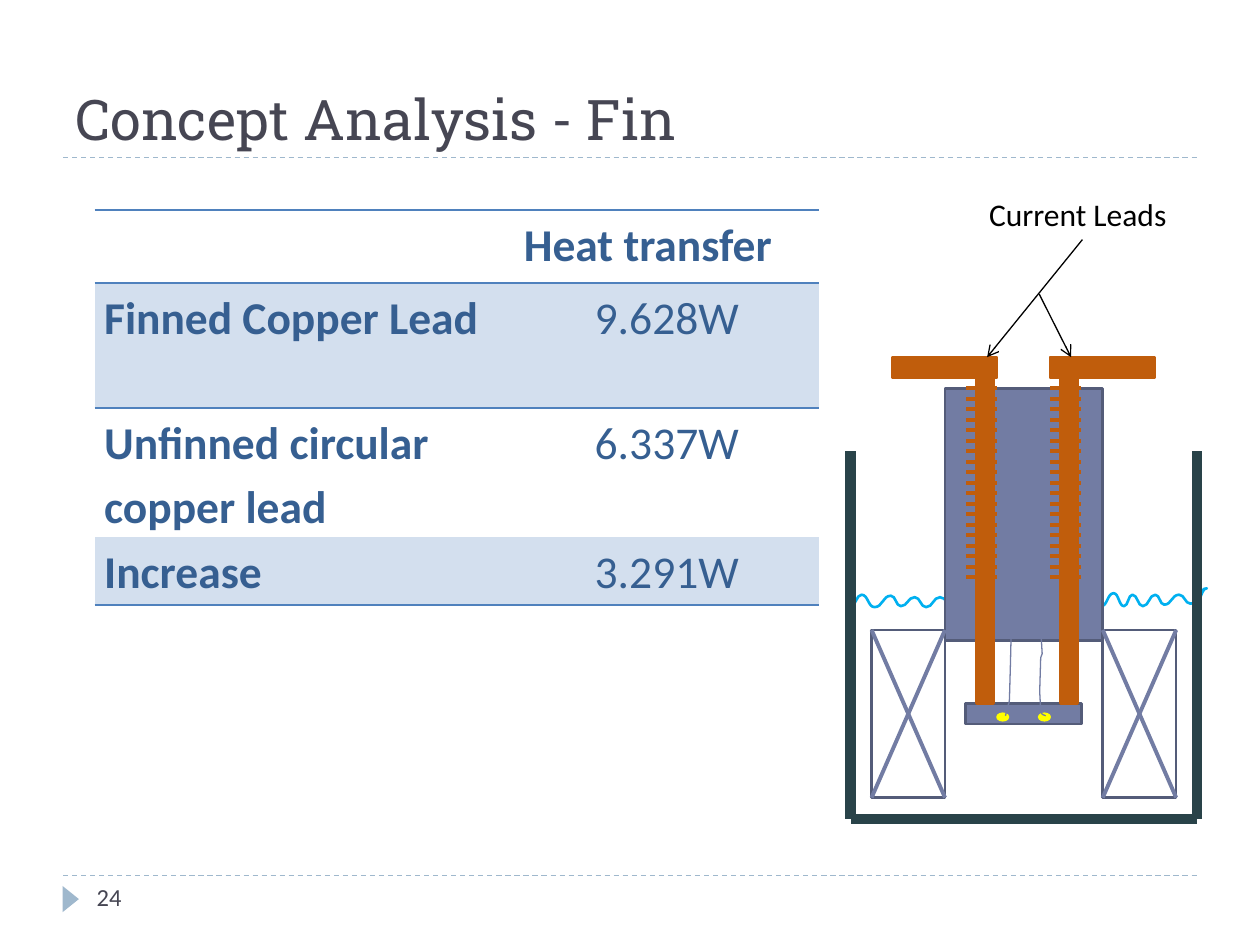
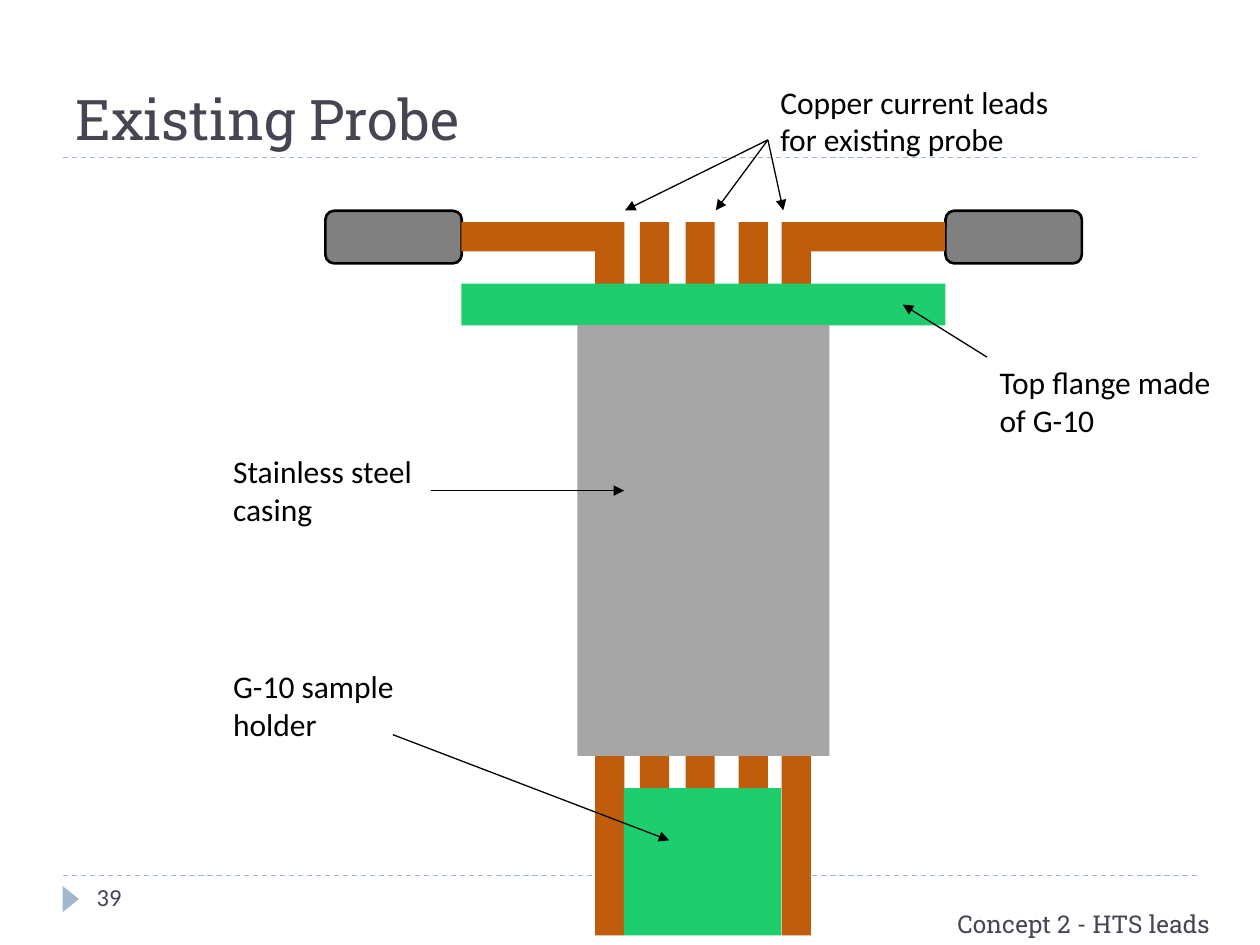
from lxml import etree
from pptx import Presentation
from pptx.dml.color import RGBColor
from pptx.enum.dml import MSO_LINE
from pptx.enum.shapes import MSO_CONNECTOR, MSO_SHAPE
from pptx.enum.text import MSO_ANCHOR, PP_ALIGN
from pptx.oxml.ns import qn
from pptx.util import Cm, Pt

RECT = MSO_SHAPE.RECTANGLE
ROUND_RECT = MSO_SHAPE.ROUNDED_RECTANGLE
OVAL = MSO_SHAPE.OVAL
TRIANGLE = MSO_SHAPE.ISOSCELES_TRIANGLE
STRAIGHT = MSO_CONNECTOR.STRAIGHT
DASH = MSO_LINE.DASH
TOP, BOTTOM = MSO_ANCHOR.TOP, MSO_ANCHOR.BOTTOM
LEFT, CENTER = PP_ALIGN.LEFT, PP_ALIGN.CENTER
PLAIN_TABLE = "{2D5ABB26-0587-4C30-8999-92F81FD0307C}"

BODY_FONT, TITLE_FONT = "Calibri", "Roboto Slab"
INK, BLACK, WHITE = "464653", "000000", "FFFFFF"
RULE = "9FB8CD"
COPPER, STEEL, STEEL_EDGE = "C05D0C", "727CA3", "545C79"
TANK, WATER, SENSOR = "294349", "00B0F0", "FFFF00"
G10, CASING, TERMINAL = "1ECE6E", "A6A6A6", "808080"
TABLE_INK, TABLE_BAND, TABLE_RULE = "365F91", "D3DFEE", "4F81BD"

HEAT_ROWS = [
    ("", "Heat transfer"),
    ("Finned Copper Lead", "9.628W"),
    ("Unfinned circular copper lead", "6.337W"),
    ("Increase", "3.291W"),
]
WAVE_TURNS = [
    (17.15, 12.22), (17.37, 11.99), (17.63, 12.24), (17.96, 12.01),
    (18.16, 12.22), (18.44, 12.04), (18.67, 12.24), (18.95, 12.04),
    (19.23, 12.24), (19.43, 11.99), (19.74, 12.27), (20.04, 11.94),
    (20.17, 12.24), (20.45, 12.01), (20.7, 12.24), (20.9, 11.96),
    (21.31, 12.27), (21.56, 11.99), (21.77, 12.22), (22, 12.04),
    (22.2, 12.22), (22.45, 11.96), (22.66, 12.22), (22.83, 11.99),
    (23.04, 12.22), (23.29, 11.99), (23.47, 12.19), (23.77, 11.99),
    (24, 12.17), (24.33, 11.86), (24.08, 12.19),
]
WIRES = [
    [(20.27, 14.43), (20.29, 14.35), (20.35, 14.1), (20.37, 13.39),
     (20.4, 12.12), (20.35, 11.84), (20.37, 10.74), (20.4, 10.67),
     (20.37, 10.31), (20.35, 9.75), (20.32, 9.63), (20.27, 9.32)],
    [(21.08, 14.43), (21.01, 14.4), (20.98, 14.33), (20.96, 13.94),
     (20.98, 13.26), (21.01, 13.18), (20.98, 12.67), (21.01, 12.6),
     (21.01, 11.61), (20.96, 10.92), (20.98, 10.52), (21.01, 10.44),
     (20.96, 10.13), (20.98, 9.32)],
]


def rgb(value):
    return RGBColor.from_string(value)


def style_run(r, size, color, font=BODY_FONT, bold=False):
    r.font.size = Pt(size)
    r.font.name = font
    r.font.bold = bold
    r.font.color.rgb = rgb(color)


def add_text(s, text, x, y, w, h, size=18, color=BLACK, font=BODY_FONT, anchor=TOP):
    tf = s.shapes.add_textbox(Cm(x), Cm(y), Cm(w), Cm(h)).text_frame
    tf.word_wrap = True
    tf.vertical_anchor = anchor
    tf.text = text
    style_run(tf.paragraphs[0].runs[0], size, color, font)


def set_outline(sp, color, width):
    if color:
        sp.line.color.rgb = rgb(color)
        sp.line.width = Pt(width)
    else:
        sp.line.fill.background()


def add_block(s, x, y, w, h, fill, edge=None, kind=RECT):
    sp = s.shapes.add_shape(kind, Cm(x), Cm(y), Cm(w), Cm(h))
    sp.shadow.inherit = False
    sp.fill.solid()
    sp.fill.fore_color.rgb = rgb(fill)
    set_outline(sp, edge, 1.5)
    return sp


def add_line(s, start, end, color=BLACK, width=0.75, dash=None, head=None):
    ln = s.shapes.add_connector(STRAIGHT, *(Cm(v) for v in (*start, *end)))
    set_outline(ln, color, width)
    if dash:
        ln.line.dash_style = dash
    if head:
        etree.SubElement(ln.line._get_or_add_ln(), qn("a:tailEnd"), type=head)
    etree.SubElement(ln._element.spPr, qn("a:effectLst"))


def round_segments(sp, upright):
    x0 = y0 = None
    for step in list(next(sp._element.iter(qn("a:path")))):
        pt = step.find(qn("a:pt"))
        x1, y1 = int(pt.get("x")), int(pt.get("y"))
        if step.tag == qn("a:lnTo"):
            xm, ym = (x0 + x1) // 2, (y0 + y1) // 2
            controls = [(x0, ym), (x1, ym)] if upright else [(xm, y0), (xm, y1)]
            curve = etree.Element(qn("a:cubicBezTo"))
            for x, y in (*controls, (x1, y1)):
                etree.SubElement(curve, qn("a:pt"), x=str(x), y=str(y))
            step.getparent().replace(step, curve)
        x0, y0 = x1, y1


def add_curve(s, points, color, width, upright=False):
    pts = [(Cm(x), Cm(y)) for x, y in points]
    fb = s.shapes.build_freeform(*pts[0])
    fb.add_line_segments(pts[1:], close=False)
    sp = fb.convert_to_shape()
    round_segments(sp, upright)
    sp.shadow.inherit = False
    sp.fill.background()
    set_outline(sp, color, width)


def add_cell_rule(cell, side):
    ln = etree.Element(qn(f"a:{side}"), w=str(Pt(1)))
    fill = etree.SubElement(ln, qn("a:solidFill"))
    etree.SubElement(fill, qn("a:srgbClr"), val=TABLE_RULE)
    cell._tc.get_or_add_tcPr().insert(0, ln)


def add_heat_table(s):
    table = s.shapes.add_table(4, 2, Cm(1.91), Cm(4.23), Cm(14.61), Cm(7.97)).table
    table.first_row = table.horz_banding = False
    next(table._tbl.iter(qn("a:tableStyleId"))).text = PLAIN_TABLE
    for column, width in zip(table.columns, (8.46, 6.15)):
        column.width = Cm(width)
    for row, height in zip(table.rows, (1.47, 2.53, 2.6, 1.37)):
        row.height = Cm(height)
    for i, texts in enumerate(HEAT_ROWS):
        for j, text in enumerate(texts):
            cell = table.cell(i, j)
            cell.margin_left = cell.margin_right = Cm(0.19)
            cell.margin_top = cell.margin_bottom = 0
            if i % 2:
                cell.fill.solid()
                cell.fill.fore_color.rgb = rgb(TABLE_BAND)
            else:
                cell.fill.background()
            if i in (0, 3):
                add_cell_rule(cell, "lnB")
            if i in (0, 1):
                add_cell_rule(cell, "lnT")
            p = cell.text_frame.paragraphs[0]
            p.text = text
            p.line_spacing = 1.15
            p.alignment = CENTER if i and j else LEFT
            for r in p.runs:
                style_run(r, 26, TABLE_INK, bold=i == 0 or j == 0)


def add_frame(prs, title):
    s = prs.slides.add_slide(prs.slide_layouts[6])
    for y in (17.65, 3.18):
        add_line(s, (1.27, y), (24.13, y), RULE, dash=DASH)
    add_block(s, 1.16, 17.96, 0.53, 0.33, RULE, kind=TRIANGLE).rotation = 90
    add_text(s, title, 1.27, 0.43, 22.86, 2.76, 32, INK, TITLE_FONT, BOTTOM)
    return s


def add_page_number(s, number):
    add_text(s, number, 1.7, 17.65, 5.5, 1.02, 14, INK)


def add_magnet(s, x):
    w, top, bottom = 1.48, 12.7, 16.08
    add_block(s, x, top, w, bottom - top, WHITE, STEEL_EDGE)
    add_line(s, (x, top), (x + w, bottom), STEEL, 2.25)
    add_line(s, (x, bottom), (x + w, top), STEEL, 2.25)


def add_finned_lead(s, x):
    add_block(s, x + 0.21, 7.62, 0.34, 6.56, COPPER, COPPER)
    for i in range(19):
        y = 7.83 + i * 3.81 / 18
        add_line(s, (x, y), (x + 0.62, y), COPPER, 2.25)


def add_cryostat(s):
    add_curve(s, WAVE_TURNS, WATER, 1.5)
    add_block(s, 19.05, 7.83, 3.18, 5.08, STEEL, STEEL_EDGE)
    for x in (17.99, 21.17):
        add_block(s, x, 7.2, 2.11, 0.42, COPPER, COPPER)
    add_block(s, 19.47, 14.18, 2.33, 0.42, STEEL, STEEL_EDGE)
    for x in (20.11, 20.95):
        add_block(s, x, 14.39, 0.21, 0.13, SENSOR, SENSOR, OVAL)
    for wire in WIRES:
        add_curve(s, wire, STEEL, 0.75, upright=True)
    for x in (17.15, 24.13):
        add_line(s, (x, 9.1), (x, 16.51), TANK, 6)
    add_line(s, (17.35, 16.51), (24.13, 16.51), TANK, 6)
    for x in (17.57, 22.23):
        add_magnet(s, x)
    add_line(s, (17.78, 16.51), (17.15, 16.51), TANK, 6)
    for x in (19.48, 21.17):
        add_finned_lead(s, x)
    add_text(s, "Current Leads", 19.69, 3.81, 4.27, 1.02)
    add_line(s, (21.82, 4.83), (19.9, 7.2), head="arrow")
    add_line(s, (20.95, 5.93), (21.59, 7.2), head="arrow")


def add_probe(s):
    for terminal_x, arm_x, lead_x in ((6.56, 9.3, 12), (19.06, 15.77, 15.76)):
        add_block(s, terminal_x, 4.25, 2.75, 1.06, TERMINAL, BLACK, ROUND_RECT)
        add_block(s, arm_x, 4.48, 3.28, 0.59, COPPER)
        add_block(s, lead_x, 4.48, 0.59, 14.38, COPPER)
    add_block(s, 12.58, 15.89, 3.17, 2.97, G10)
    for x in (12.9, 13.82, 14.89):
        add_block(s, x, 4.48, 0.59, 11.41, COPPER)
    add_block(s, 9.3, 5.72, 9.76, 0.84, G10)
    add_block(s, 11.64, 6.55, 5.08, 8.69, CASING)


def add_probe_labels(s):
    for text, x, y, w, h in (
        ("Copper current leads for existing probe", 15.48, 1.54, 6.4, 2.57),
        ("Top flange made of G-10", 19.9, 7.19, 4.88, 1.8),
        ("Stainless steel casing", 4.45, 8.99, 4.24, 1.8),
        ("G-10 sample holder", 4.45, 13.33, 4.24, 2.57),
    ):
        add_text(s, text, x, y, w, h)
    for tip_x in (12.6, 14.43, 15.79):
        add_line(s, (15.48, 2.82), (tip_x, 4.24), head="triangle")
    for start, tip in (
        ((19.9, 7.2), (18.2, 6.14)),
        ((8.68, 9.89), (12.58, 9.89)),
        ((7.92, 14.81), (13.49, 16.94)),
    ):
        add_line(s, start, tip, head="triangle")


def main():
    prs = Presentation()
    prs.slide_width, prs.slide_height = Cm(25.4), Cm(19.05)

    s = add_frame(prs, "Concept Analysis - Fin")
    add_heat_table(s)
    add_page_number(s, "24")
    add_cryostat(s)

    s = add_frame(prs, "Existing Probe")
    add_probe(s)
    add_probe_labels(s)
    add_text(s, "Concept 2 - HTS leads", 19.05, 17.78, 6.3, 1.27, 14, INK, TITLE_FONT, BOTTOM)
    add_page_number(s, "39")

    prs.save("out.pptx")


if __name__ == "__main__":
    main()
